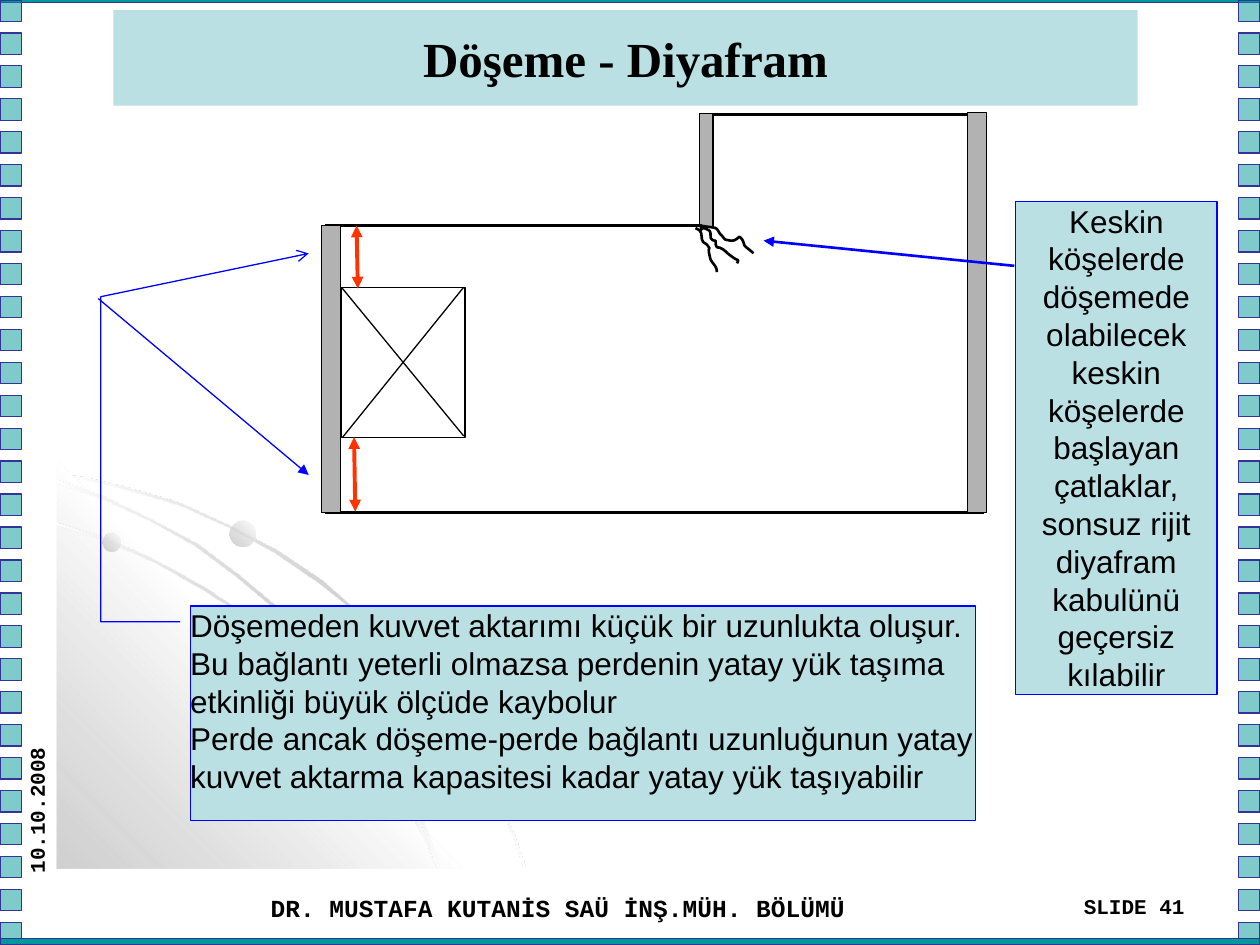
import lxml.etree
import pptx
import pptx.dml.color
import pptx.enum.shapes
import pptx.enum.text
import pptx.oxml.ns
import pptx.util

Inches = pptx.util.Inches
Pt = pptx.util.Pt
RGBColor = pptx.dml.color.RGBColor
Shape = pptx.enum.shapes.MSO_SHAPE
Align = pptx.enum.text.PP_ALIGN
Anchor = pptx.enum.text.MSO_ANCHOR
qn = pptx.oxml.ns.qn

BLACK = RGBColor(0x00, 0x00, 0x00)
WHITE = RGBColor(0xFF, 0xFF, 0xFF)
GRAY = RGBColor(0xB2, 0xB2, 0xB2)
TEAL = RGBColor(0x00, 0x99, 0x99)
INDIGO = RGBColor(0x33, 0x33, 0x99)
PALE = RGBColor(0xBB, 0xE0, 0xE3)
BLUE = RGBColor(0x00, 0x00, 0xFF)
RED = RGBColor(0xFF, 0x33, 0x00)

SOFT_GRAY = (GRAY, 60)
SOFT_WHITE = (WHITE, 80)
ARC_STOPS = [SOFT_WHITE, SOFT_GRAY, SOFT_WHITE]
WEDGE_STOPS = [SOFT_GRAY, SOFT_WHITE, SOFT_GRAY]
BALL_STOPS = [SOFT_GRAY, SOFT_WHITE]

ARCS = [
    [(1.02, 3.87), (0.73, 3.8), (0.45, 3.75), (0.45, 3.77), (0.73, 3.82), (1.01, 3.89),
     (1.42, 4.01), (1.8, 4.18), (2.18, 4.39), (2.53, 4.63), (2.86, 4.89), (3.16, 5.19),
     (3.43, 5.52), (3.68, 5.89), (3.83, 6.12), (3.95, 6.37), (4.06, 6.62), (4.15, 6.88),
     (4.17, 6.88), (4.08, 6.62), (3.97, 6.37), (3.85, 6.12), (3.7, 5.88), (3.45, 5.51),
     (3.17, 5.18), (2.87, 4.88), (2.55, 4.6), (2.19, 4.36), (1.82, 4.17), (1.43, 3.99)],
    [(3.3, 6.54), (3.39, 6.71), (3.46, 6.88), (3.48, 6.88), (3.41, 6.7), (3.31, 6.52),
     (3.12, 6.15), (2.87, 5.8), (2.6, 5.46), (2.29, 5.16), (1.97, 4.89), (1.62, 4.66),
     (1.24, 4.45), (0.86, 4.28), (0.45, 4.15), (0.45, 4.17), (0.84, 4.3), (1.23, 4.47),
     (1.6, 4.68), (1.95, 4.9), (2.28, 5.18), (2.58, 5.48), (2.86, 5.81), (3.1, 6.17)],
    [(0.45, 3.81), (0.45, 3.84), (0.82, 3.97), (1.19, 4.14), (1.55, 4.34), (1.87, 4.58),
     (2.18, 4.84), (2.47, 5.14), (2.73, 5.45), (2.98, 5.8), (3.12, 6.07), (3.25, 6.34),
     (3.37, 6.62), (3.46, 6.88), (3.48, 6.88), (3.39, 6.6), (3.27, 6.32), (3.14, 6.05),
     (2.99, 5.79), (2.74, 5.43), (2.49, 5.13), (2.2, 4.82), (1.89, 4.56), (1.57, 4.32),
     (1.21, 4.13), (0.84, 3.95)],
]
WEDGE = [(0.45, 3.66), (3.67, 6.89), (0.45, 6.89)]
CRACKS = [
    [(5.56, 1.79), (5.6, 1.8), (5.64, 1.8), (5.68, 1.81), (5.7, 1.82), (5.71, 1.86),
     (5.73, 1.87), (5.76, 1.91), (5.75, 1.9), (5.8, 1.91), (5.81, 1.91), (5.83, 1.91),
     (5.84, 1.9), (5.85, 1.9), (5.86, 1.88), (5.87, 1.88), (5.9, 1.9), (5.9, 1.93),
     (5.91, 1.95), (5.94, 1.98), (5.95, 1.98), (5.98, 2.01)],
    [(5.52, 1.81), (5.61, 1.84), (5.53, 1.91), (5.61, 1.94), (5.66, 2.01), (5.6, 1.92),
     (5.64, 2.06), (5.66, 2.1), (5.69, 2.11), (5.69, 2.16)],
    [(5.56, 1.78), (5.58, 1.88), (5.54, 1.77), (5.63, 1.83), (5.65, 1.85), (5.63, 1.89),
     (5.65, 1.9), (5.66, 1.91), (5.67, 1.91), (5.68, 1.91), (5.68, 1.93), (5.68, 1.95),
     (5.69, 1.96), (5.7, 1.97), (5.71, 1.96), (5.72, 1.97), (5.75, 1.98), (5.77, 2.01),
     (5.8, 2.03), (5.86, 2.08), (5.87, 2.05), (5.85, 2.09)],
]
CORNER_NOTE = ("Keskin köşelerde döşemede olabilecek keskin köşelerde başlayan çatlaklar, "
               "sonsuz rijit diyafram kabulünü geçersiz kılabilir")
TRANSFER_NOTE = [
    "Döşemeden kuvvet aktarımı küçük bir uzunlukta oluşur.",
    "Bu bağlantı yeterli olmazsa perdenin yatay yük taşıma etkinliği büyük ölçüde kaybolur",
    "Perde ancak döşeme-perde bağlantı uzunluğunun yatay kuvvet aktarma kapasitesi kadar "
    "yatay yük taşıyabilir",
]


def bezier_points(controls, steps=6):
    points = [controls[0]]
    for index in range(0, len(controls) - 1, 3):
        curve = controls[index:index + 4]
        for step in range(1, steps + 1):
            t = step / steps
            weights = ((1 - t) ** 3, 3 * t * (1 - t) ** 2, 3 * t ** 2 * (1 - t), t ** 3)
            points.append(tuple(sum(w * point[axis] for w, point in zip(weights, curve))
                                for axis in (0, 1)))
    return points


class SlideBuilder:
    def __init__(self, slide, body_font="Arial", footer_font="Courier New"):
        self.slide = slide
        self.body_font = body_font
        self.footer_font = footer_font

    def paint(self, shape, fill=None, line=None, width=0.75, alpha=None):
        shape.shadow.inherit = False
        if fill is None:
            shape.fill.background()
        else:
            shape.fill.solid()
            shape.fill.fore_color.rgb = fill
        if alpha:
            color = shape.element.spPr.find(qn("a:solidFill"))[0]
            lxml.etree.SubElement(color, qn("a:alpha"), val=str(alpha * 1000))
        if line is None:
            shape.line.fill.background()
        else:
            shape.line.color.rgb = line
            shape.line.width = Pt(width)
        return shape

    def paint_gradient(self, shape, stops, angle):
        self.paint(shape, WHITE)
        solid = shape.element.spPr.find(qn("a:solidFill"))
        gradient = lxml.etree.Element(qn("a:gradFill"), rotWithShape="1")
        stop_list = lxml.etree.SubElement(gradient, qn("a:gsLst"))
        for index, (rgb, alpha) in enumerate(stops):
            position = 100000 * index // (len(stops) - 1)
            stop = lxml.etree.SubElement(stop_list, qn("a:gs"), pos=str(position))
            color = lxml.etree.SubElement(stop, qn("a:srgbClr"), val=str(rgb))
            lxml.etree.SubElement(color, qn("a:alpha"), val=str(alpha * 1000))
        lxml.etree.SubElement(gradient, qn("a:lin"), ang=str(angle * 60000), scaled="1")
        solid.getparent().replace(solid, gradient)

    def shape(self, left, top, width, height, kind=Shape.RECTANGLE, **style):
        shape = self.slide.shapes.add_shape(
            kind, Inches(left), Inches(top), Inches(width), Inches(height))
        return self.paint(shape, **style)

    def outline(self, points, closed):
        corners = [(Inches(x), Inches(y)) for x, y in points]
        builder = self.slide.shapes.build_freeform(*corners[0], scale=1.0)
        builder.add_line_segments(corners[1:], close=closed)
        return builder.convert_to_shape()

    def arrowheads(self, shape, head=None, tail=None):
        line = shape.element.spPr.find(qn("a:ln"))
        for tag, kind in (("a:headEnd", head), ("a:tailEnd", tail)):
            if kind:
                lxml.etree.SubElement(line, qn(tag), type=kind)

    def line(self, start, end, color=BLACK, width=1.5, head=None, tail=None):
        connector = self.slide.shapes.add_connector(
            pptx.enum.shapes.MSO_CONNECTOR.STRAIGHT, *map(Inches, start + end))
        connector.line.color.rgb = color
        connector.line.width = Pt(width)
        self.arrowheads(connector, head, tail)
        lxml.etree.SubElement(connector.element.spPr, qn("a:effectLst"))

    def set_text(self, shape, texts, size=18, font=None, bold=False, align=Align.LEFT,
                 anchor=Anchor.TOP, inset=0):
        frame = shape.text_frame
        frame.word_wrap = True
        frame.vertical_anchor = anchor
        frame.margin_left = frame.margin_right = Inches(inset)
        frame.margin_top = frame.margin_bottom = Inches(inset / 2)
        for index, text in enumerate(texts):
            paragraph = frame.add_paragraph() if index else frame.paragraphs[0]
            paragraph.text = text
            paragraph.alignment = align
            paragraph.font.name = font or self.body_font
            paragraph.font.size = Pt(size)
            paragraph.font.bold = bold
            paragraph.font.color.rgb = BLACK

    def footer(self, text, left, top, width, height, size=12, align=Align.LEFT, rotation=0):
        box = self.slide.shapes.add_textbox(
            Inches(left), Inches(top), Inches(width), Inches(height))
        box.rotation = rotation
        self.set_text(box, [text], size, self.footer_font, True, align, inset=0.1)


def draw_background(builder):
    builder.shape(0, -0.03, 10, 0.05, fill=TEAL, line=INDIGO)
    square, rows = 0.17, 29
    pitch = (7.5 - 0.18) / (rows - 1)
    for left in (0, 10 - square):
        for row in range(rows):
            builder.shape(left, row * pitch, square, square, fill=TEAL, line=INDIGO, alpha=50)
    builder.shape(0, 7.45, 10, 0.05, fill=TEAL, line=INDIGO)
    for points, stops, angle in ((ARCS[0], ARC_STOPS, 45), (WEDGE, WEDGE_STOPS, 315),
                                 (ARCS[1], ARC_STOPS, 45), (ARCS[2], ARC_STOPS, 45)):
        builder.paint_gradient(builder.outline(points, True), stops, angle)
    for left, top, size, angle in ((0.81, 4.23, 0.15, 315), (3.12, 6.14, 0.16, 45),
                                   (1.82, 4.13, 0.21, 315)):
        ball = builder.shape(left, top, size, size, Shape.OVAL)
        builder.paint_gradient(ball, BALL_STOPS, angle)


def draw_floor_plan(builder):
    corners = [(2.58, 1.79), (2.58, 4.07), (7.81, 4.07), (7.81, 0.91), (5.56, 0.91),
               (5.56, 1.79)]
    for start, end in zip(corners, corners[1:] + corners[:1]):
        builder.line(start, end)
    for wall in ((7.68, 0.89, 0.15, 3.18), (2.55, 1.79, 0.15, 2.28), (5.55, 0.9, 0.11, 0.9)):
        builder.shape(*wall, fill=GRAY, line=BLACK)
    builder.shape(2.71, 2.28, 0.98, 1.19, line=BLACK)
    builder.line((2.71, 2.28), (3.68, 3.46), width=0.75)
    builder.line((3.68, 2.28), (2.72, 3.47), width=0.75)
    for crack in CRACKS:
        builder.paint(builder.outline(bezier_points(crack), False), line=BLACK, width=1.5)
    for start, end in (((2.83, 1.79), (2.84, 2.29)), ((2.81, 3.47), (2.82, 4.06))):
        builder.line(start, end, RED, 2.25, "triangle", "triangle")


def draw_notes(builder):
    corner_note = builder.shape(8.06, 1.6, 1.6, 3.91, fill=PALE, line=BLUE)
    builder.set_text(corner_note, [CORNER_NOTE], align=Align.CENTER)
    callout = builder.shape(1.51, 4.81, 6.23, 1.7, Shape.LINE_CALLOUT_3, fill=PALE, line=BLUE)
    bends = (0.074, -0.013, 0.074, -0.114, -1.444, -0.114, -1.646, 0.151)
    for index, value in enumerate(bends):
        callout.adjustments[index] = value
    builder.arrowheads(callout, tail="arrow")
    builder.set_text(callout, TRANSFER_NOTE)
    builder.line((0.78, 2.37), (2.45, 3.77), BLUE, 0.75, tail="triangle")
    builder.line((8.05, 2.11), (6.06, 1.91), BLUE, 1.5, tail="triangle")


def main():
    presentation = pptx.Presentation()
    presentation.slide_width, presentation.slide_height = Inches(10), Inches(7.5)
    builder = SlideBuilder(presentation.slides.add_slide(presentation.slide_layouts[6]))
    draw_background(builder)
    builder.footer("10.10.2008", -0.52, 6.04, 1.65, 0.33, rotation=270)
    builder.footer("DR. MUSTAFA KUTANİS SAÜ İNŞ.MÜH. BÖLÜMÜ", 2.05, 7.04, 5, 0.31, size=14)
    builder.footer("SLIDE 41", 7.56, 7.04, 1.94, 0.31, align=Align.RIGHT)
    title = builder.shape(0.9, 0.08, 8.13, 0.76, fill=PALE)
    builder.set_text(title, ["Döşeme - Diyafram"], 28, "Times New Roman", True, Align.CENTER,
                     Anchor.MIDDLE, 0.1)
    draw_floor_plan(builder)
    draw_notes(builder)
    presentation.save("out.pptx")


if __name__ == "__main__":
    main()
